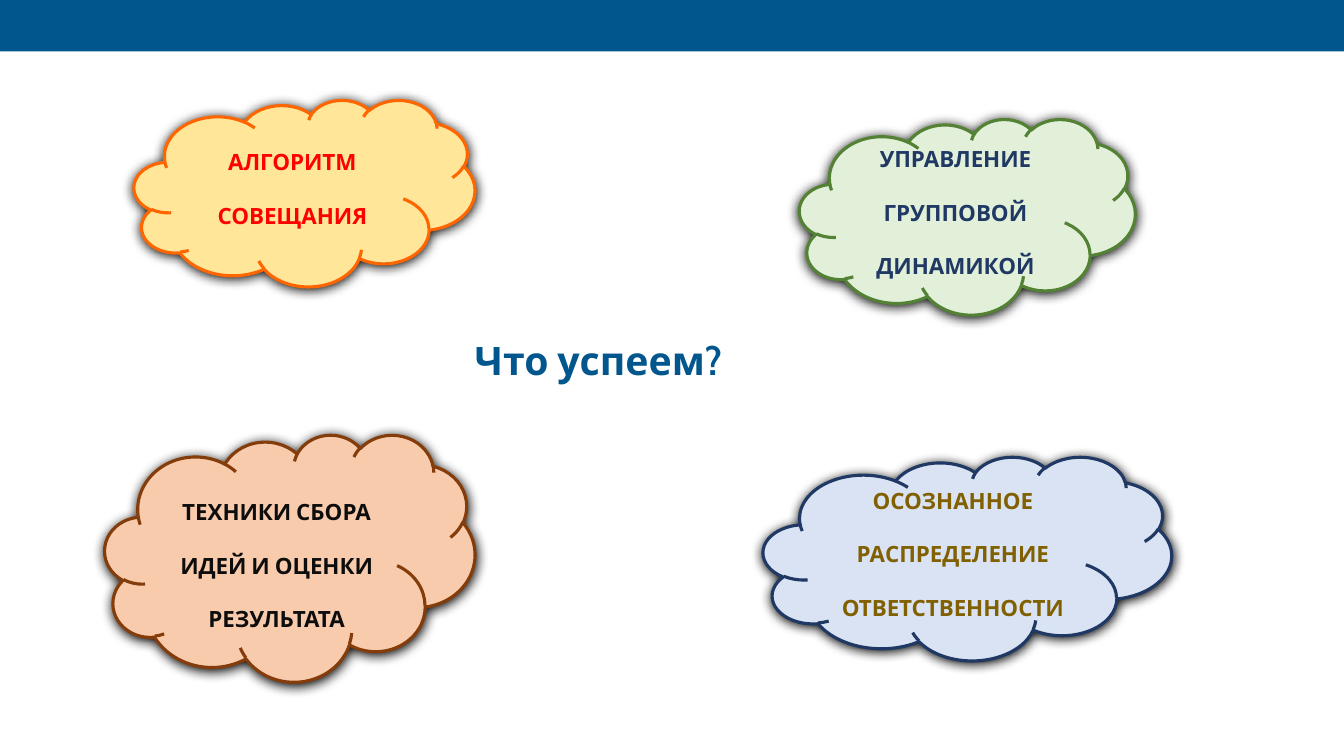
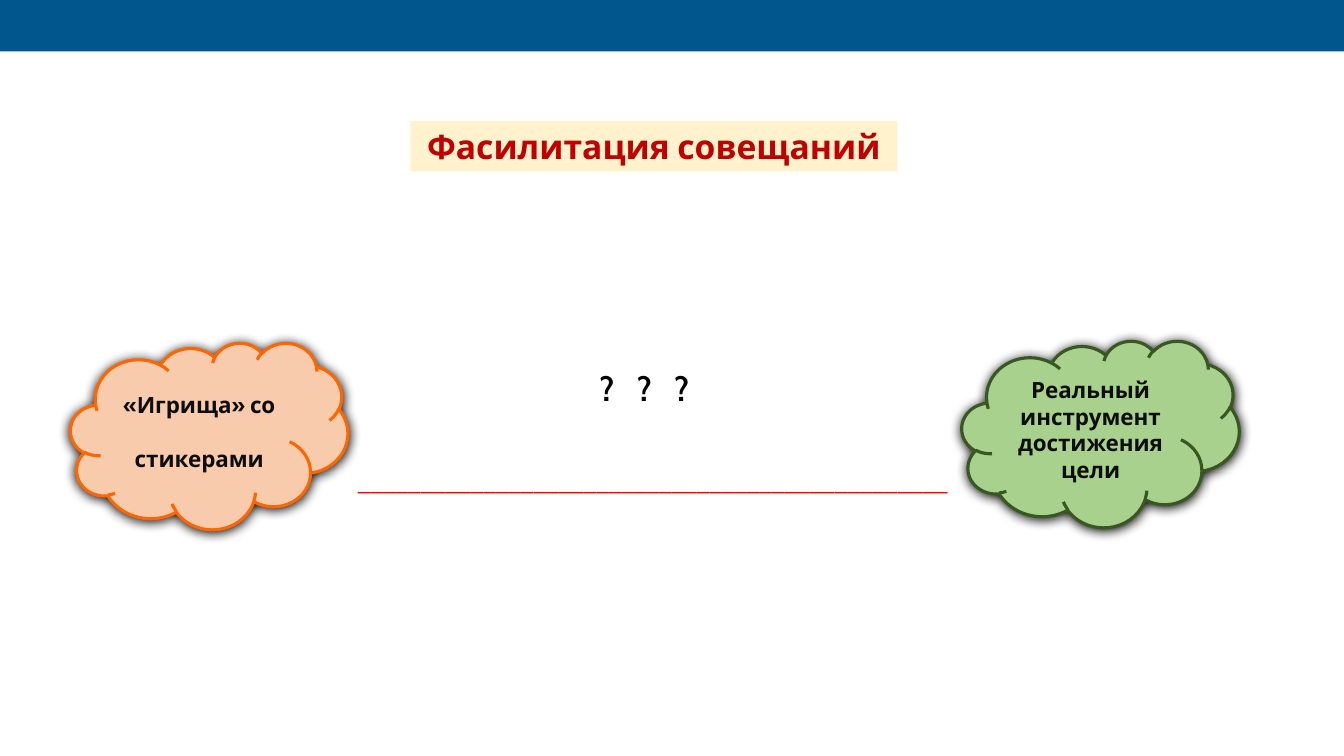
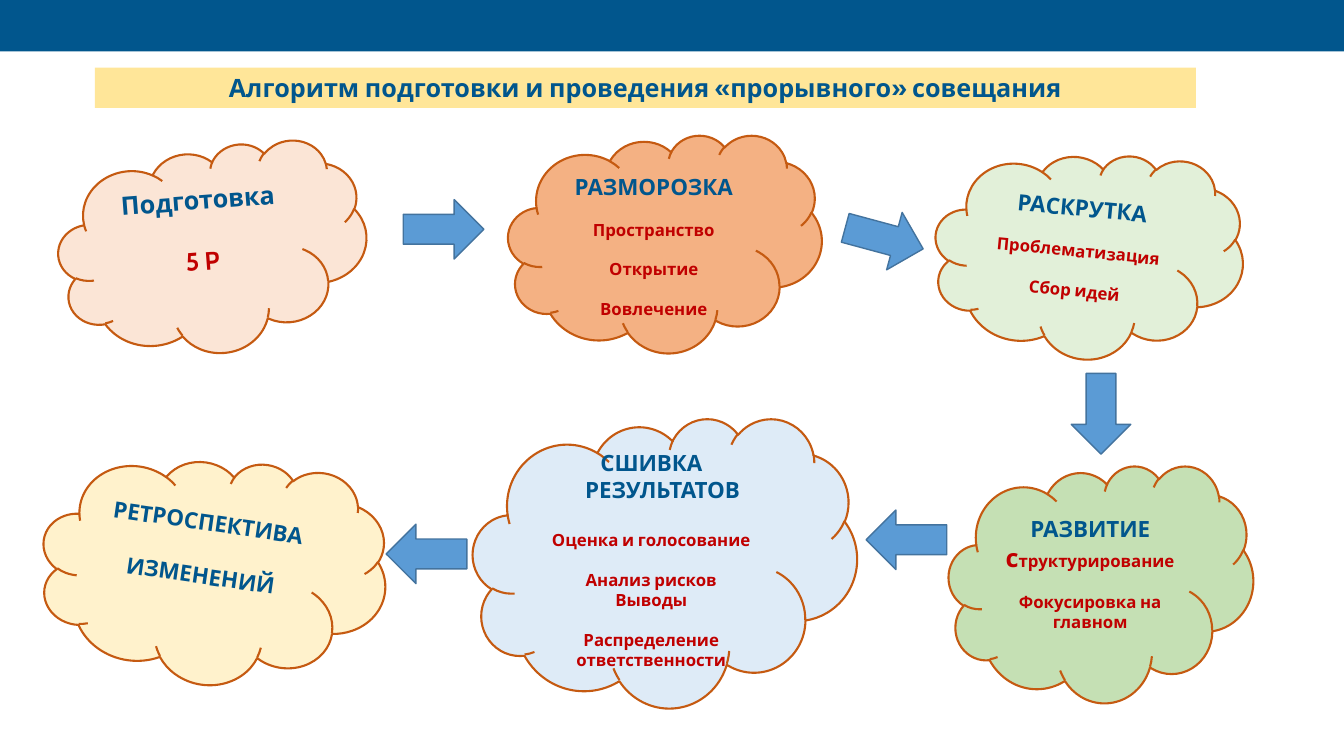
from lxml.etree import SubElement
from pptx import Presentation
from pptx.dml.color import RGBColor
from pptx.enum.shapes import MSO_SHAPE
from pptx.enum.text import MSO_ANCHOR, MSO_AUTO_SIZE, PP_ALIGN
from pptx.oxml.ns import qn
from pptx.util import Pt

PX = 9144  # 100 px to the inch
FONT = "Cabin"

BLUE = RGBColor(0x01, 0x56, 0x8D)
RED = RGBColor(0xC0, 0x00, 0x00)
BRIGHT_RED = RGBColor(0xFF, 0x00, 0x00)
BLACK = RGBColor(0x00, 0x00, 0x00)
INK = RGBColor(0x0D, 0x0D, 0x0D)
NAVY = RGBColor(0x20, 0x38, 0x64)
OLIVE = RGBColor(0x80, 0x60, 0x00)
ORANGE = RGBColor(0xFF, 0x66, 0x00)
BROWN = RGBColor(0x84, 0x3C, 0x0B)
RUST = RGBColor(0xC5, 0x5A, 0x11)
GREEN = RGBColor(0x54, 0x82, 0x35)
DARK_GREEN = RGBColor(0x38, 0x57, 0x23)
YELLOW = RGBColor(0xFF, 0xE6, 0x99)
CREAM = RGBColor(0xFF, 0xF2, 0xCC)
PEACH = RGBColor(0xF8, 0xCB, 0xAD)
PALE_PEACH = RGBColor(0xFB, 0xE5, 0xD6)
APRICOT = RGBColor(0xF4, 0xB1, 0x83)
LAVENDER = RGBColor(0xDA, 0xE3, 0xF3)
PALE_BLUE = RGBColor(0xDE, 0xEB, 0xF7)
PALE_GREEN = RGBColor(0xE2, 0xF0, 0xD9)
SOFT_GREEN = RGBColor(0xC5, 0xE0, 0xB4)
LEAF_GREEN = RGBColor(0xA9, 0xD1, 0x8E)
ARROW_FILL = RGBColor(0x5B, 0x9B, 0xD5)
ARROW_LINE = RGBColor(0x43, 0x73, 0x9E)


def add_titled_slide(text, box, size, color, fill=None):
    slide = presentation.slides.add_slide(presentation.slide_layouts[5])
    title = slide.shapes.title
    title.left, title.top, title.width, title.height = [value * PX for value in box]
    if fill:
        title.fill.solid()
        title.fill.fore_color.rgb = fill
    text_frame = title.text_frame
    text_frame.text = text
    text_frame.word_wrap = True
    text_frame.auto_size = MSO_AUTO_SIZE.NONE
    text_frame.vertical_anchor = MSO_ANCHOR.TOP
    paragraph = text_frame.paragraphs[0]
    paragraph.alignment = PP_ALIGN.CENTER
    font = paragraph.runs[0].font
    font.name, font.size, font.bold, font.color.rgb = FONT, Pt(size), True, color
    return slide


def add_cloud(slide, box, fill, line, lines, lift=0, rotation=0, shadow=False):
    """Lines are (text, size, color, space before); lift raises or lowers the text."""
    cloud = slide.shapes.add_shape(MSO_SHAPE.CLOUD, *[value * PX for value in box])
    cloud.rotation = rotation
    cloud.fill.solid()
    cloud.fill.fore_color.rgb = fill
    cloud.line.color.rgb = line
    cloud.line.width = Pt(2.25 if shadow else 1.5)
    cloud.shadow.inherit = False
    if shadow:
        effects = cloud.element.spPr.find(qn("a:effectLst"))
        outer = SubElement(effects, qn("a:outerShdw"), blurRad=str(Pt(8.5)),
                           dist=str(Pt(1)), dir="5400000", rotWithShape="0")
        SubElement(outer, qn("a:srgbClr"), val="000000")
    text_frame = cloud.text_frame
    text_frame.word_wrap = True
    text_frame.vertical_anchor = MSO_ANCHOR.MIDDLE
    text_frame.margin_top = Pt(3.6 + max(-lift, 0))
    text_frame.margin_bottom = Pt(3.6 + max(lift, 0))
    text_frame.text = "\n".join(item[0] for item in lines)
    for paragraph, (text, size, color, space) in zip(text_frame.paragraphs, lines):
        paragraph.alignment = PP_ALIGN.CENTER
        if space:
            paragraph.space_before = Pt(space)
        font = paragraph.runs[0].font
        font.name, font.size, font.bold, font.color.rgb = FONT, Pt(size), True, color
    return cloud


presentation = Presentation()
presentation.slide_width = 1333 * PX
presentation.slide_height = 750 * PX

# Slide 1: topics
slide = add_titled_slide("Что успеем?", (424, 329, 339, 57), 28, BLUE)

# Top band, moved to the master so that every slide shows it
band = slide.shapes.add_shape(MSO_SHAPE.RECTANGLE, 0, 0, 1333 * PX, 51 * PX)
band.fill.solid()
band.fill.fore_color.rgb = BLUE
band.line.fill.background()
band.shadow.inherit = False
band.element.xpath(".//p:cNvPr")[0].set("id", "20")
presentation.slide_master.shapes.element.insert(2, band.element)

topics = [
    ((133, 99, 338, 185), YELLOW, ORANGE, BRIGHT_RED, 0,
     ["АЛГОРИТМ", "СОВЕЩАНИЯ"]),
    ((104, 431, 367, 245), PEACH, BROWN, INK, -19,
     ["ТЕХНИКИ СБОРА", "ИДЕЙ И ОЦЕНКИ", "РЕЗУЛЬТАТА"]),
    ((757, 453, 405, 202), LAVENDER, NAVY, OLIVE, 0,
     ["ОСОЗНАННОЕ", "РАСПРЕДЕЛЕНИЕ", "ОТВЕТСТВЕННОСТИ"]),
    ((793, 118, 333, 194), PALE_GREEN, GREEN, NAVY, 0,
     ["УПРАВЛЕНИЕ", "ГРУППОВОЙ", "ДИНАМИКОЙ"]),
]
for box, fill, line, color, lift, words in topics:
    lines = [(word, 16, color, 19 if index else 0) for index, word in enumerate(words)]
    add_cloud(slide, box, fill, line, lines, lift, shadow=True)

# Slide 2: two views of facilitation
slide = add_titled_slide("Фасилитация совещаний", (407, 120, 483, 50), 24, RED, CREAM)
add_cloud(slide, (70, 340, 275, 185), PEACH, ORANGE,
          [("«Игрища» со", 16, INK, 0), ("стикерами", 16, INK, 19)], shadow=True)
add_cloud(slide, (954, 338, 275, 185), LEAF_GREEN, DARK_GREEN,
          [("Реальный инструмент достижения цели", 16, INK, 0)], shadow=True)

# Scale between the two views, with the question marks above it
scale_texts = [
    ("_" * 47, (345, 457, 609, 40), "Calibri", 18, BRIGHT_RED, False),
    ("?\t?\t?", (585, 360, 180, 50), FONT, 24, BLACK, True),
]
for text, box, name, size, color, bold in scale_texts:
    text_box = slide.shapes.add_textbox(*[value * PX for value in box])
    text_box.text_frame.word_wrap = True
    paragraph = text_box.text_frame.paragraphs[0]
    paragraph.text = text
    if "\t" in text:
        tabs = SubElement(paragraph._p.get_or_add_pPr(), qn("a:tabLst"))
        for stop in (37, 74):
            SubElement(tabs, qn("a:tab"), pos=str(stop * PX), algn="l")
    for run in paragraph.runs:
        font = run.font
        font.name, font.size, font.bold, font.color.rgb = name, Pt(size), bold, color

# Slide 3: meeting algorithm
slide = add_titled_slide("Алгоритм подготовки и проведения «прорывного» совещания",
                         (94, 67, 1092, 40), 18, BLUE, YELLOW)
add_cloud(slide, (504, 134, 311, 216), APRICOT, RUST,
          [("РАЗМОРОЗКА", 16, BLUE, 0), ("Пространство", 12, RED, 14),
           ("Открытие", 12, RED, 14), ("Вовлечение", 12, RED, 14)], lift=-10)
add_cloud(slide, (58, 145, 306, 205), PALE_PEACH, RUST,
          [("Подготовка", 18, BLUE, 0), ("5 P", 18, RED, 22)], lift=22, rotation=355.6)
add_cloud(slide, (927, 151, 306, 205), PALE_GREEN, RUST,
          [("РАСКРУТКА", 16, BLUE, 0), ("Проблематизация", 12, RED, 14),
           ("Сбор идей", 12, RED, 14)], lift=3, rotation=5.5)
results = add_cloud(slide, (469, 415, 381, 287), PALE_BLUE, RUST,
                    [("СШИВКА", 16, BLUE, 0), ("РЕЗУЛЬТАТОВ", 16, BLUE, 0),
                     ("Оценка и голосование", 12, RED, 19),
                     ("Анализ рисков", 12, RED, 14), ("Выводы", 12, RED, 0),
                     ("Распределение ответственности", 12, RED, 14)], lift=-5)
results.text_frame.paragraphs[1]._p.get_or_add_pPr().set("marL", str(Pt(16)))
add_cloud(slide, (41, 454, 342, 225), CREAM, RUST,
          [("РЕТРОСПЕКТИВА", 16, BLUE, 0), ("ИЗМЕНЕНИЙ", 16, BLUE, 19)],
          lift=22, rotation=8.3)
growth = add_cloud(slide, (941, 462, 302, 235), SOFT_GREEN, RUST,
                   [("РАЗВИТИЕ", 16, BLUE, 0), ("с", 18, RED, 0),
                    ("Фокусировка на главном", 12, RED, 14)], lift=7)

# The larger first letter is followed by the rest of its word
rest = growth.text_frame.paragraphs[1].add_run()
rest.text = "труктурирование"
font = rest.font
font.name, font.size, font.bold, font.color.rgb = FONT, Pt(12), True, RED

# Arrows from step to step
for left, top, rotation in [(400, 198, 0), (837, 207, 15.1), (1052, 381, 90),
                            (859, 506, 180), (383, 520, 180)]:
    arrow = slide.shapes.add_shape(MSO_SHAPE.RIGHT_ARROW, left * PX, top * PX,
                                   80 * PX, 59 * PX)
    arrow.rotation = rotation
    arrow.fill.solid()
    arrow.fill.fore_color.rgb = ARROW_FILL
    arrow.line.color.rgb = ARROW_LINE
    arrow.line.width = Pt(1)
    arrow.shadow.inherit = False

presentation.save("out.pptx")
